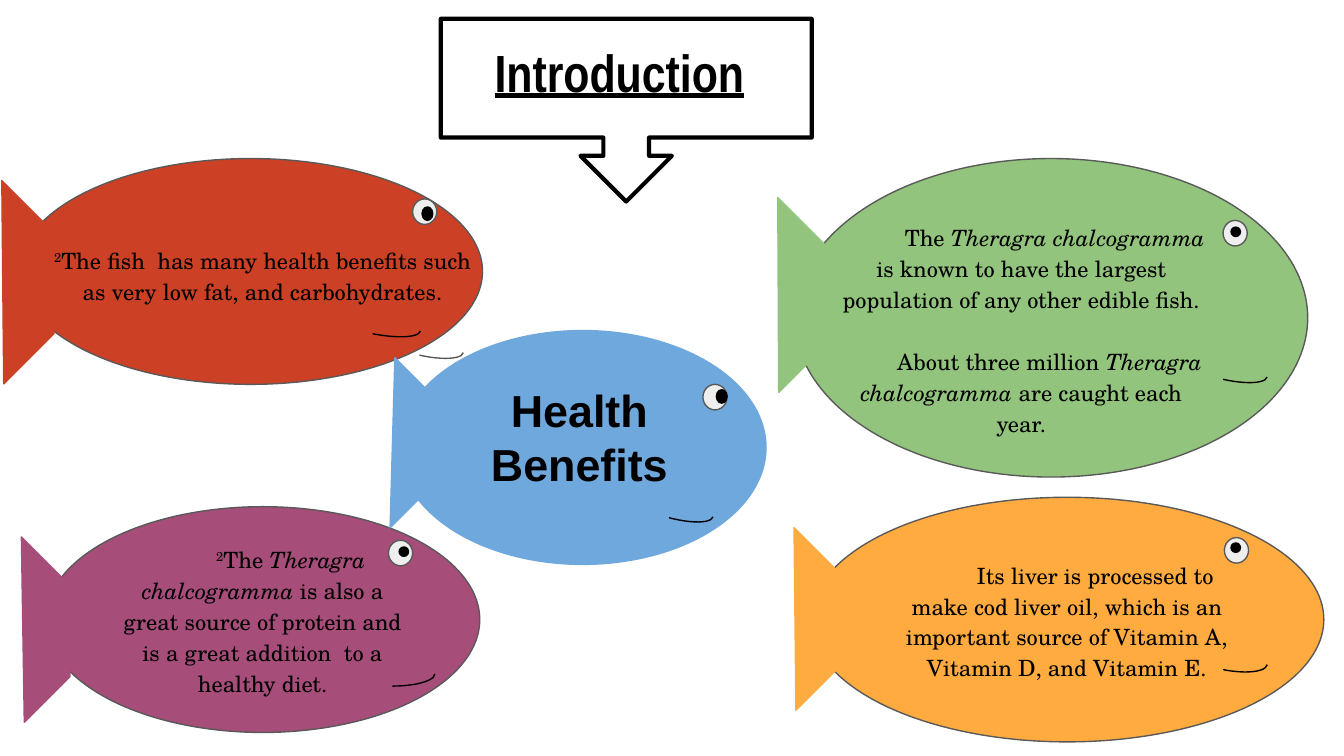
import pptx
import pptx.util
import pptx.dml.color
import pptx.enum.shapes
import pptx.enum.text

Inches = pptx.util.Inches
Pt = pptx.util.Pt
MSO = pptx.enum.shapes.MSO_SHAPE
ALIGN = pptx.enum.text.PP_ALIGN
ANCHOR = pptx.enum.text.MSO_ANCHOR

COLORS = {
    "red": "CC4125",
    "green": "93C47D",
    "purple": "A64D79",
    "orange": "FFAB40",
    "blue": "6FA8DC",
    "eye": "EEEEEE",
    "grey": "595959",
    "black": "000000",
}
SERIF = "TeX Gyre Schola"
SPECIES = ("Theragra chalcogramma", "i")


def rgb(name):
    return pptx.dml.color.RGBColor.from_string(COLORS[name])


def add_part(slide, kind, box, fill, line, weight=0.75, rotation=0):
    sp = slide.shapes.add_shape(kind, *[Inches(v) for v in box])
    sp.shadow.inherit = False
    sp.rotation = rotation
    if fill:
        sp.fill.solid()
        sp.fill.fore_color.rgb = rgb(fill)
    else:
        sp.fill.background()
    sp.line.color.rgb = rgb(line)
    sp.line.width = Pt(weight)
    return sp


def set_frame(tf, anchor):
    tf.word_wrap = True
    tf.auto_size = pptx.enum.text.MSO_AUTO_SIZE.NONE
    tf.vertical_anchor = anchor
    tf.margin_left = tf.margin_right = Inches(0.1)
    tf.margin_top = tf.margin_bottom = Inches(0.1)


def add_run(p, text, font, size, style=""):
    r = p.add_run()
    r.text = text
    r.font.name = font
    r.font.size = Pt(size)
    r.font.color.rgb = rgb("black")
    r.font.bold = "b" in style
    r.font.italic = "i" in style
    r.font.underline = "u" in style
    if "^" in style:
        r.font._element.set("baseline", "30000")


def add_paragraphs(tf, paragraphs, font, size, spacing, gap):
    for i, (indent, runs) in enumerate(paragraphs):
        p = tf.paragraphs[0] if i == 0 else tf.add_paragraph()
        p.alignment = ALIGN.CENTER
        p.line_spacing = spacing
        if i:
            p.space_before = Pt(gap)
        pPr = p._p.get_or_add_pPr()
        pPr.set("marL", "0")
        pPr.set("indent", str(Inches(indent)))
        for text, style in runs:
            add_run(p, text, font, size, style)


def add_fish(slide, box, color, kind, tail, eye, pupil, mouths, paragraphs,
             text_box=None, outline="grey", font=SERIF, size=12, spacing=1.15, gap=0):
    left, top = box[:2]

    def place(x, y, w, h):
        return left + x, top + y, w, h

    body = add_part(slide, kind, box, color, outline)
    add_part(slide, MSO.DIAGONAL_STRIPE, place(*tail), color, color, rotation=135)
    add_part(slide, MSO.OVAL, place(*eye, 0.18, 0.19), "eye", "grey")
    add_part(slide, MSO.OVAL, place(*pupil), "black", "black")
    for *mouth, rotation, line in mouths:
        arc = add_part(slide, MSO.ARC, place(*mouth), None, line, rotation=rotation)
        arc.adjustments[0] = 162
        arc.adjustments[1] = 0
    if text_box:
        tf = slide.shapes.add_textbox(*[Inches(v) for v in place(*text_box)]).text_frame
    else:
        tf = body.text_frame
    set_frame(tf, ANCHOR.TOP if text_box else ANCHOR.MIDDLE)
    add_paragraphs(tf, paragraphs, font, size, spacing, gap)


def add_heading(slide, box):
    left, top = box[:2]
    callout = add_part(slide, MSO.DOWN_ARROW_CALLOUT, box, None, "black", 2.25)
    callout.adjustments[3] = 0.65
    title = slide.shapes.title
    title.left, title.top = Inches(left - 3.38), Inches(top + 0.06)
    title.width, title.height = Inches(10), Inches(0.99)
    tf = title.text_frame
    set_frame(tf, ANCHOR.TOP)
    p = tf.paragraphs[0]
    p.alignment = ALIGN.LEFT
    p._p.get_or_add_pPr().set("marL", str(Inches(3.68)))
    add_run(p, "Introduction", "Arial Narrow", 28, "bu")


def main():
    prs = pptx.Presentation()
    prs.slide_width = Inches(10)
    prs.slide_height = Inches(10 * 9 / 16)
    s = prs.slides.add_slide(prs.slide_layouts[5])

    add_heading(s, (3.28, 0.14, 2.76, 1.36))
    add_fish(
        s, (0.14, 1.18, 3.45, 1.68), "red", MSO.FLOWCHART_CONNECTOR,
        tail=(-0.65, 0.38, 1.06, 1.08), eye=(2.93, 0.3), pupil=(3, 0.36, 0.08, 0.1),
        mouths=[(2.56, 0.87, 0.18, 0.69, 101.3, "black"),
                (2.91, 1.06, 0.18, 0.63, 102.7, "grey")],
        paragraphs=[(-0.08, [("2", "^"), (
            "The fish  has many health benefits such as very low fat, "
            "and carbohydrates.", "")])],
        text_box=(0.15, 0.53, 3.33, 1.74))
    add_fish(
        s, (5.91, 1.18, 3.82, 2.37), "green", MSO.FLOWCHART_CONNECTOR,
        tail=(-0.63, 0.5, 1.02, 1.03), eye=(3.19, 0.46), pupil=(3.25, 0.51, 0.07, 0.07),
        mouths=[(3.12, 1.24, 0.18, 0.63, 102.9, "black")],
        paragraphs=[
            (0.5, [("The ", ""), SPECIES, (
                " is known to have the largest population of any other edible fish.", "")]),
            (0.42, [("About three million ", ""), SPECIES, (" are caught each year.", "")])],
        text_box=(0.19, 0.36, 3, 0.83), gap=16.6)
    add_fish(
        s, (0.34, 3.77, 3.23, 1.68), "purple", MSO.OVAL,
        tail=(-0.65, 0.42, 0.96, 0.99), eye=(2.55, 0.25), pupil=(2.63, 0.3, 0.07, 0.07),
        mouths=[(2.49, 0.93, 0.18, 0.63, 90, "black")],
        paragraphs=[(0.42, [("2", "^"), ("The ", ""), SPECIES, (
            " is also a great source of protein and is a great addition  "
            "to a healthy diet.", "")])])
    add_fish(
        s, (6.03, 3.7, 3.82, 1.82), "orange", MSO.OVAL,
        tail=(-0.59, 0.42, 0.95, 0.97), eye=(3.08, 0.3), pupil=(3.13, 0.34, 0.07, 0.07),
        mouths=[(2.99, 0.87, 0.2, 0.63, 101.1, "black")],
        paragraphs=[(0.42, [(
            "Its liver is processed to make cod liver oil, which is an important "
            "source of Vitamin A, Vitamin D, and Vitamin E.", "")])])
    add_fish(
        s, (2.97, 2.46, 2.73, 1.74), "blue", MSO.FLOWCHART_CONNECTOR,
        tail=(-0.51, 0.4, 0.92, 0.87), eye=(2.26, 0.4), pupil=(2.36, 0.44, 0.08, 0.1),
        mouths=[(1.94, 0.99, 0.18, 0.63, 104.9, "black")],
        paragraphs=[(0, [("Health", "b")]), (0, [("Benefits", "b")])],
        text_box=(0.53, 0.29, 1.62, 0.99),
        outline="blue", font="Arial", size=24, spacing=1)

    prs.save("out.pptx")


if __name__ == "__main__":
    main()
